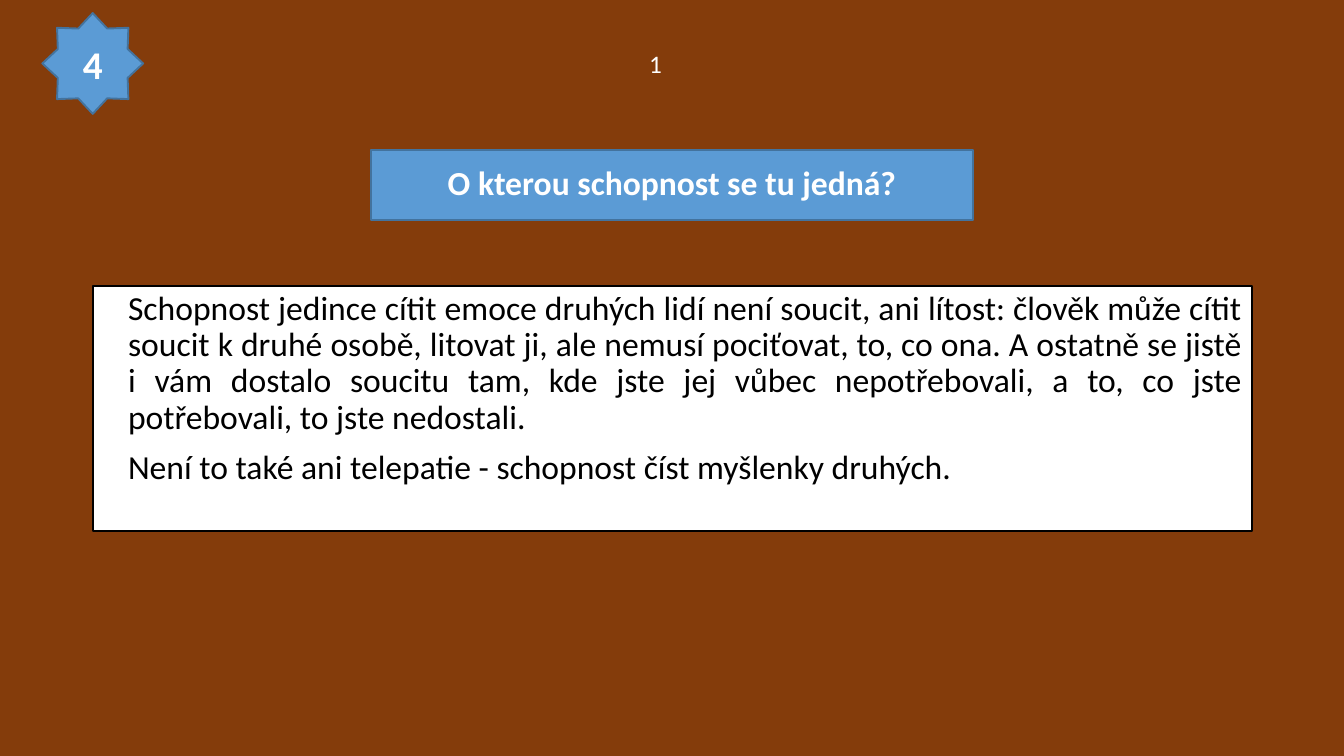
from pptx import Presentation
from pptx.dml.color import RGBColor
from pptx.enum.shapes import MSO_SHAPE as Shape
from pptx.enum.text import MSO_ANCHOR as Anchor, MSO_AUTO_SIZE as Fit, PP_ALIGN as Align
from pptx.oxml.xmlchemy import OxmlElement
from pptx.util import Inches, Pt

TITLE = "O kterou schopnost se tu jedná?"
BODY = [
    "Schopnost jedince cítit emoce druhých lidí není soucit, ani lítost: "
    "člověk může cítit soucit k druhé osobě, litovat ji, ale nemusí pociťovat, "
    "to, co ona. A ostatně se jistě i vám dostalo soucitu tam, kde jste jej "
    "vůbec nepotřebovali, a to, co jste potřebovali, to jste nedostali.",
    "Není to také ani telepatie - schopnost číst myšlenky druhých.",
]
BADGE = "4"
COUNT = "1"
BROWN, BLUE, EDGE = "843C0B", "5B9BD5", "43739E"
WHITE, BLACK = "FFFFFF", "000000"


def paint(target, color):
    target.solid()
    target.fore_color.rgb = RGBColor.from_string(color)


def place(shape, box):
    shape.left, shape.top, shape.width, shape.height = map(Inches, box)


def frame(shape, fill, edge):
    paint(shape.fill, fill)
    paint(shape.line.fill, edge)
    shape.line.width = Pt(1.35)


def write(shape, lines, size, color, align, anchor, bold=False, pitch=None):
    text = shape.text_frame
    text.text = "\n".join(lines)
    text.vertical_anchor = anchor
    text.auto_size = Fit.NONE
    text.word_wrap = True
    for para in text.paragraphs:
        para.alignment = align
        para.line_spacing = pitch
        for run in para.runs:
            font = run.font
            font.name, font.size, font.bold = "Calibri", Pt(size), bold
            paint(font.fill, color)


deck = Presentation()
deck.slide_width, deck.slide_height = Inches(13.33), Inches(7.5)
slide = deck.slides.add_slide(deck.slide_layouts[1])
paint(slide.background.fill, BROWN)

title = slide.shapes.title
place(title, (3.68, 1.49, 5.97, 0.69))
frame(title, BLUE, EDGE)
write(title, [TITLE], 24, WHITE, Align.CENTER, Anchor.MIDDLE, True, 0.9)

body = slide.placeholders[1]
place(body, (0.92, 2.84, 11.5, 2.43))
frame(body, WHITE, BLACK)
write(body, BODY, 24, BLACK, Align.JUSTIFY, Anchor.TOP, pitch=0.9)
for para in body.text_frame.paragraphs:
    para.space_before = Pt(10)
    props = para._p.get_or_add_pPr()
    props.set("marL", str(Inches(0.25)))
    props.set("indent", "0")
    props.append(OxmlElement("a:buNone"))

badge = slide.shapes.add_shape(Shape.STAR_8_POINT, *map(Inches, (0.42, 0.13, 1, 1)))
badge.shadow.inherit = False
frame(badge, BLUE, EDGE)
write(badge, [BADGE], 28, WHITE, Align.CENTER, Anchor.MIDDLE, True)

count = slide.shapes.add_textbox(*map(Inches, (6.34, 0.43, 0.33, 0.4)))
write(count, [COUNT], 18, WHITE, Align.LEFT, Anchor.TOP)
count.text_frame.word_wrap = False
count.text_frame.auto_size = Fit.SHAPE_TO_FIT_TEXT

deck.save("out.pptx")
